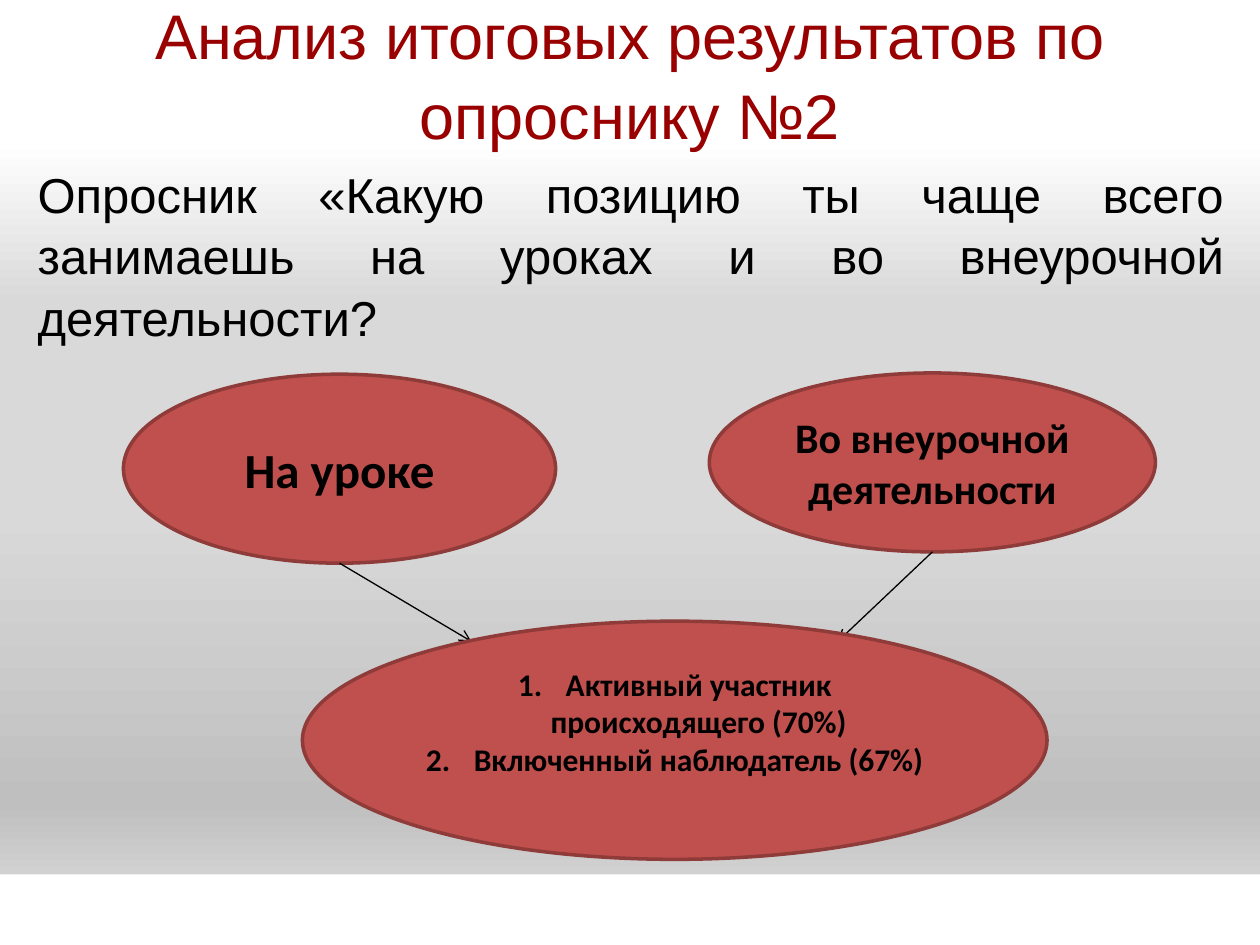
from dataclasses import dataclass

from lxml import etree
from pptx import Presentation
from pptx.dml.color import RGBColor
from pptx.enum.shapes import MSO_CONNECTOR as Link, MSO_SHAPE as Preset
from pptx.enum.text import MSO_ANCHOR as Anchor, PP_ALIGN as Align
from pptx.oxml import parse_xml
from pptx.oxml.ns import nsdecls, qn
from pptx.util import Inches, Pt


@dataclass(frozen=True)
class Theme:
    white: str = "FFFFFF"
    black: str = "000000"
    title: str = "990000"
    oval: str = "C0504D"
    oval_line: str = "8E3B39"
    backdrop: tuple = ((0, "FFFFFF"), (15, "FFFFFF"), (32, "D9D9D9"),
                       (54, "D9D9D9"), (85, "BFBFBF"), (100, "E6E6E6"))
    heading_font: str = "Arial"
    label_font: str = "Calibri"
    title_size: int = 36
    large: int = 28
    medium: int = 24
    small: int = 18


class SlideBuilder:
    def __init__(self, page, theme):
        self.page = page
        self.theme = theme

    def backdrop(self):
        fill = self.page.background.fill
        fill.gradient()
        fill.gradient_angle = 270  # counter-clockwise, so top to bottom
        stops = self.page.background._cSld.find(".//" + qn("a:gsLst"))
        for stop in list(stops):
            stops.remove(stop)
        for percent, color in self.theme.backdrop:
            stops.append(parse_xml(
                f'<a:gs {nsdecls("a")} pos="{percent * 1000}">'
                f'<a:srgbClr val="{color}"/></a:gs>'))

    def add_text(self, box, texts, align, numbered=False, spacing=None, **font):
        frame = box.text_frame
        frame.word_wrap = True
        color = RGBColor.from_string(font.pop("color"))
        for index, text in enumerate(texts):
            para = frame.paragraphs[0] if index == 0 else frame.add_paragraph()
            if numbered:
                self.number(para)
            para.alignment = align
            if spacing:
                para.line_spacing = spacing
            span = para.add_run()
            span.text = text
            for name, value in font.items():
                setattr(span.font, name, value)
            span.font.color.rgb = color

    def number(self, para):
        properties = para._p.get_or_add_pPr()
        properties.set("marL", str(Inches(0.38)))
        properties.set("indent", str(Inches(-0.38)))
        numbering = etree.SubElement(properties, qn("a:buAutoNum"))
        numbering.set("type", "arabicPeriod")

    def shape(self, preset, place, fill, line=None):
        box = self.page.shapes.add_shape(preset, *map(Inches, place))
        box.shadow.inherit = False
        box.fill.solid()
        box.fill.fore_color.rgb = RGBColor.from_string(fill)
        if line:
            box.line.color.rgb = RGBColor.from_string(line)
            box.line.width = Pt(2)
        else:
            box.line.fill.background()
        box.text_frame.vertical_anchor = Anchor.MIDDLE
        return box

    def band(self, place):
        return self.shape(Preset.RECTANGLE, place, self.theme.white)

    def heading(self, place, text):
        self.add_text(self.band(place), [text], Align.CENTER, spacing=1.05,
                      name=self.theme.heading_font, color=self.theme.title,
                      size=Pt(self.theme.title_size))

    def question(self, place, text):
        box = self.page.shapes.add_textbox(*map(Inches, place))
        self.add_text(box, [text], Align.JUSTIFY, spacing=1.05,
                      name=self.theme.heading_font, color=self.theme.black,
                      size=Pt(self.theme.large))

    def oval(self, place, texts, size, numbered=False):
        box = self.shape(Preset.OVAL, place, self.theme.oval, self.theme.oval_line)
        self.add_text(box, texts, Align.CENTER, numbered, size=Pt(size), bold=True,
                      name=self.theme.label_font, color=self.theme.black)
        return box

    def arrow(self, source, end):
        """Draw an arrow from the bottom middle of the source to a point."""
        connector = self.page.shapes.add_connector(
            Link.STRAIGHT, source.left + source.width // 2,
            source.top + source.height, *map(Inches, end))
        connector.line.color.rgb = RGBColor.from_string(self.theme.black)
        connector.line.width = Pt(0.75)
        tail = etree.SubElement(connector.line._get_or_add_ln(), qn("a:tailEnd"))
        tail.set("type", "arrow")
        etree.SubElement(connector._element.spPr, qn("a:effectLst"))


def main():
    deck = Presentation()
    deck.slide_width, deck.slide_height = Inches(10), Inches(7.5)
    theme = Theme()
    slide = SlideBuilder(deck.slides.add_slide(deck.slide_layouts[6]), theme)

    slide.backdrop()
    slide.band((0, 6.94, 10, 0.56))
    slide.heading((0, 0, 10, 1.15), "Анализ итоговых результатов по опроснику №2")
    slide.question((0.2, 1.23, 9.61, 5.47),
                   "Опросник «Какую позицию ты чаще всего занимаешь на уроках "
                   "и во внеурочной деятельности?")

    lesson = slide.oval((0.98, 2.97, 3.43, 1.5), ["На уроке"], theme.large)
    activity = slide.oval((5.63, 2.96, 3.54, 1.42),
                          ["Во внеурочной деятельности"], theme.medium)
    slide.arrow(lesson, (3.74, 5.09))
    slide.arrow(activity, (6.65, 5.09))
    results = slide.oval((2.4, 4.93, 5.91, 1.89),
                         ["Активный участник происходящего (70%)",
                          "Включенный наблюдатель (67%)"],
                         theme.small, numbered=True)
    results.text_frame.margin_bottom = Inches(0.35)

    deck.save("out.pptx")


if __name__ == "__main__":
    main()
